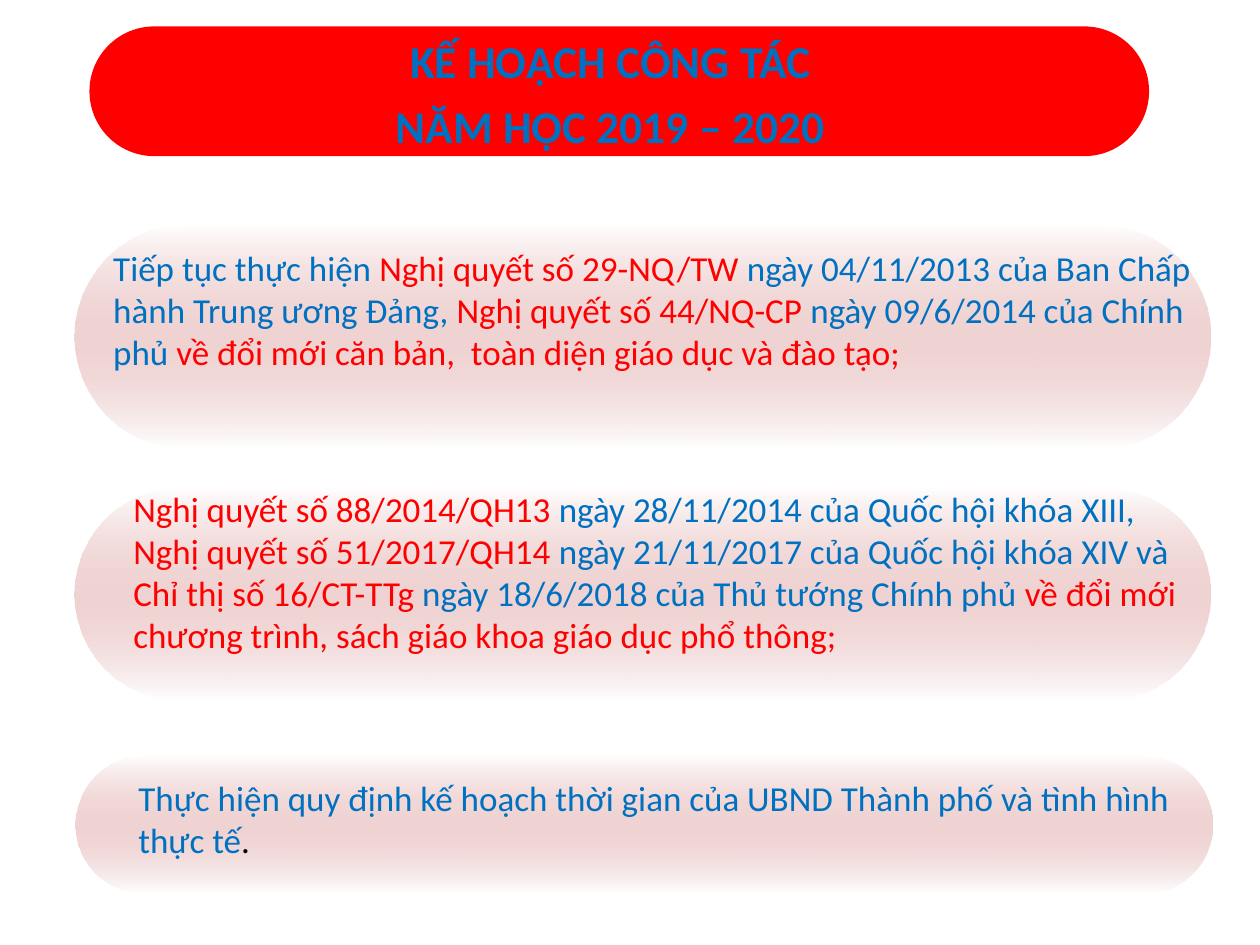
from dataclasses import dataclass
from typing import NamedTuple

from lxml.etree import SubElement
from pptx import Presentation
from pptx.dml.color import RGBColor
from pptx.enum.shapes import MSO_SHAPE
from pptx.enum.text import MSO_ANCHOR, MSO_AUTO_SIZE, PP_ALIGN
from pptx.oxml.ns import qn
from pptx.shapes.autoshape import Shape
from pptx.shapes.shapetree import GroupShapes
from pptx.text.text import Font, TextFrame
from pptx.util import Inches, Pt


@dataclass(frozen=True)
class Theme:
    font: str = "Calibri"
    head: int = 26
    body: int = 20
    gap: int = 6
    blue: RGBColor = RGBColor(0x00, 0x70, 0xC0)
    red: RGBColor = RGBColor(0xFF, 0x00, 0x00)
    rose: RGBColor = RGBColor(0xC0, 0x50, 0x4D)
    white: RGBColor = RGBColor(0xFF, 0xFF, 0xFF)
    black: RGBColor = RGBColor(0x00, 0x00, 0x00)


THEME = Theme()


class Box(NamedTuple):
    left: float
    top: float
    width: float
    height: float


class Phrase(NamedTuple):
    text: str
    color: RGBColor


class Item(NamedTuple):
    pill: Box
    area: Box
    words: list[Phrase]


def blue(text: str) -> Phrase:
    return Phrase(text, THEME.blue)


def red(text: str) -> Phrase:
    return Phrase(text, THEME.red)


TITLE_PILL = Box(0.71, 0.21, 8.41, 1.03)
TITLE_AREA = Box(1.46, 0.21, 6.77, 1.06)
TITLE = "KẾ HOẠCH CÔNG TÁC\nNĂM HỌC 2019 – 2020"
ITEMS = [
    Item(Box(0.59, 1.78, 9.02, 1.78), Box(0.8, 1.91, 8.82, 1.45), [
        blue("Tiếp tục thực hiện "),
        red("Nghị quyết số 29-NQ/TW "),
        blue("ngày 04/11/2013 của Ban Chấp hành Trung ương Đảng, "),
        red("Nghị quyết số 44/NQ-CP "),
        blue("ngày 09/6/2014 của Chính phủ "),
        red("về đổi mới căn bản,  toàn diện giáo dục và đào tạo;"),
    ]),
    Item(Box(0.59, 3.87, 9.02, 1.69), Box(0.96, 3.82, 8.5, 1.78), [
        red("Nghị quyết số 88/2014/QH13"),
        blue(" ngày 28/11/2014 của Quốc hội khóa XIII, "),
        red("Nghị quyết số 51/2017/QH14 "),
        blue("ngày 21/11/2017 của Quốc hội khóa XIV và "),
        red("Chỉ thị số 16/CT-TTg "),
        blue("ngày 18/6/2018 của Thủ tướng Chính phủ "),
        red("về đổi mới chương trình, sách giáo khoa giáo dục phổ thông;"),
    ]),
    Item(Box(0.6, 6, 9.02, 1.09), Box(1, 6.11, 8.43, 0.77), [
        blue("Thực hiện quy định kế hoạch thời gian của UBND "
             "Thành phố và tình hình thực tế"),
        Phrase(".", THEME.black),
    ]),
]


def style(font: Font, size: int, color: RGBColor, bold: bool = False) -> None:
    font.name = THEME.font
    font.size = Pt(size)
    font.bold = bold
    font.color.rgb = color


def setup(frame: TextFrame) -> None:
    frame.word_wrap = True
    frame.auto_size = MSO_AUTO_SIZE.SHAPE_TO_FIT_TEXT
    frame.vertical_anchor = MSO_ANCHOR.TOP


def add_pill(shapes: GroupShapes, box: Box) -> Shape:
    pill = shapes.add_shape(MSO_SHAPE.ROUNDED_RECTANGLE, *map(Inches, box))
    pill.adjustments[0] = 0.5
    pill.shadow.inherit = False
    pill.line.fill.background()
    return pill


def fade(pill: Shape) -> None:
    pill.fill.gradient()
    pill.fill.gradient_angle = 270
    for stop, color in zip(pill.fill.gradient_stops, (THEME.rose, THEME.white)):
        stop.color.rgb = color
    first, last = pill.fill.gradient_stops
    first.position, last.position = 0, 1
    tint = next(pill._element.spPr.iter(qn("a:srgbClr")))
    SubElement(tint, qn("a:alpha"), val="0")


def add_text(shapes: GroupShapes, item: Item) -> None:
    frame = shapes.add_textbox(*map(Inches, item.area)).text_frame
    setup(frame)
    for phrase in item.words:
        run = frame.paragraphs[0].add_run()
        run.text = phrase.text
        style(run.font, THEME.body, phrase.color)


def set_title(title: Shape) -> None:
    title.left, title.top, title.width, title.height = map(Inches, TITLE_AREA)
    frame = title.text_frame
    frame.text = TITLE
    setup(frame)
    for para in frame.paragraphs:
        para.alignment = PP_ALIGN.CENTER
        style(para.runs[0].font, THEME.head, THEME.blue, True)
    frame.paragraphs[1].space_before = Pt(THEME.gap)


def main() -> None:
    deck = Presentation()
    deck.slide_width, deck.slide_height = Inches(10), Inches(7.5)
    slide = deck.slides.add_slide(deck.slide_layouts[5])
    shapes = slide.shapes
    group = shapes.add_group_shape().shapes
    banner = add_pill(group, TITLE_PILL)
    banner.fill.solid()
    banner.fill.fore_color.rgb = THEME.red
    for item in ITEMS:
        fade(add_pill(group, item.pill))
    title = shapes.title
    set_title(title)
    shapes._spTree.append(title._element)
    for item in ITEMS:
        add_text(shapes, item)
    deck.save("out.pptx")


if __name__ == "__main__":
    main()
